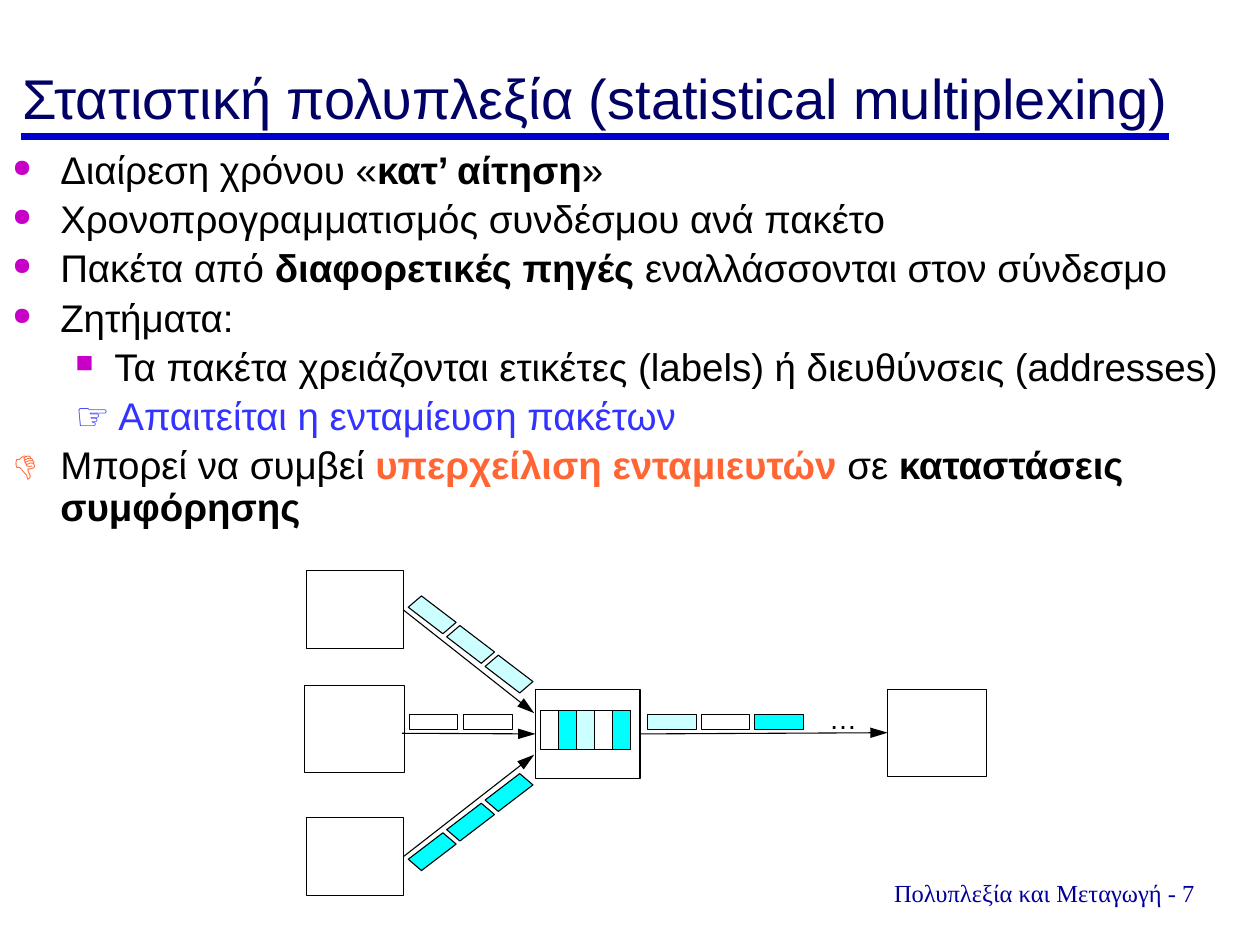
"""Build the slide on statistical multiplexing."""
from dataclasses import dataclass
from typing import NamedTuple, Optional

import lxml.etree
import pptx
import pptx.dml.color
import pptx.enum.shapes
import pptx.enum.text
import pptx.oxml.ns
import pptx.shapes.autoshape
import pptx.shapes.connector
import pptx.slide
import pptx.text.text
import pptx.util

RGBColor = pptx.dml.color.RGBColor
BLACK = RGBColor(0x00, 0x00, 0x00)
NAVY = RGBColor(0x00, 0x00, 0x66)
RULE_BLUE = RGBColor(0x00, 0x00, 0xCC)
FOOTER_BLUE = RGBColor(0x00, 0x00, 0x99)
NOTE_BLUE = RGBColor(0x33, 0x33, 0xFF)
ORANGE = RGBColor(0xFF, 0x66, 0x33)
MAGENTA = RGBColor(0xC7, 0x00, 0xC7)
PALE_CYAN = RGBColor(0xCC, 0xFF, 0xFF)
CYAN = RGBColor(0x00, 0xFF, 0xFF)

COLUMNS, ROWS = 100, 75
CELL = pptx.util.Inches(0.1)
TOP, LEFT, BOTTOM, RIGHT = range(4)
THIN = 0.63
AXIS = 58.2


class Box(NamedTuple):
    """A rectangle in grid columns and rows."""
    column: float
    row: float
    width: float
    height: float


class Span(NamedTuple):
    """A stretch of text with one look."""
    text: str
    bold: bool = False
    color: RGBColor = BLACK


@dataclass(frozen=True)
class Point:
    """A paragraph of the body with its outline level and bullet."""
    spans: tuple[Span, ...]
    bullet: Optional[str] = "●"
    level: int = 0


@dataclass(frozen=True)
class Train:
    """Equal packets in a row, a fill or None for each."""
    first: Box
    pitch: float
    fills: tuple[Optional[RGBColor], ...]


POINTS = (
    Point((Span("Διαίρεση χρόνου «"), Span("κατ’ αίτηση", True), Span("»"))),
    Point((Span("Χρονοπρογραμματισμός συνδέσμου ανά πακέτο"),)),
    Point((Span("Πακέτα από "), Span("διαφορετικές πηγές", True),
           Span(" εναλλάσσονται στον σύνδεσμο"))),
    Point((Span("Ζητήματα:"),)),
    Point((Span("Τα πακέτα χρειάζονται ετικέτες (labels) ή διευθύνσεις (addresses)"),), "■", 1),
    Point((Span("☞ Απαιτείται η ενταμίευση πακέτων", color=NOTE_BLUE),), None, 1),
    Point((Span("👎\t", color=ORANGE), Span("Μπορεί να συμβεί "),
           Span("υπερχείλιση ενταμιευτών ", True, ORANGE), Span("σε "),
           Span("καταστάσεις συμφόρησης", True)), None),
)
INDENTS = ((3.8, -3.8), (8.1, -3.1))

TRAINS = (
    Train(Box(32.5, 56.7, 3.85, 1.2), 4.3, (None, None)),
    Train(Box(51.4, 56.7, 3.85, 1.2), 4.25, (PALE_CYAN, None, CYAN)),
    Train(Box(42.9, 56.4, 1.45, 3.1), 1.43, (None, CYAN, PALE_CYAN, None, CYAN)),
)
SLANTED_PACKET = ((33.45, 47.3), (36.2, 49.4), (35.15, 50.3), (32.4, 48.2))
SLANTED_STEP = (3.05, 2.35)


def grid(cells: float) -> pptx.util.Emu:
    """Turn a number of grid cells into a length."""
    return pptx.util.Emu(round(cells * CELL))


def place(box: Box) -> tuple[pptx.util.Emu, ...]:
    """Turn a box into left, top, width and height."""
    return tuple(grid(cells) for cells in box)


def style(shape: pptx.shapes.autoshape.Shape, fill: Optional[RGBColor], weight: float = THIN) -> None:
    """Give an outline its black line and its fill, if any."""
    shape.shadow.inherit = False
    shape.line.color.rgb = BLACK
    shape.line.width = pptx.util.Pt(weight)
    if fill is None:
        shape.fill.background()
    else:
        shape.fill.solid()
        shape.fill.fore_color.rgb = fill


def draw_box(slide: pptx.slide.Slide, box: Box, fill: Optional[RGBColor] = None,
             weight: float = THIN) -> pptx.shapes.autoshape.Shape:
    """Draw an outlined rectangle."""
    shape = slide.shapes.add_shape(pptx.enum.shapes.MSO_SHAPE.RECTANGLE, *place(box))
    style(shape, fill, weight)
    return shape


def draw_train(slide: pptx.slide.Slide, train: Train) -> None:
    """Draw a row of upright packets."""
    for index, fill in enumerate(train.fills):
        draw_box(slide, train.first._replace(column=train.first.column + index * train.pitch), fill)


def draw_slanted_train(slide: pptx.slide.Slide, fill: RGBColor, mirrored: bool) -> None:
    """Draw three packets along a slope, above the axis or mirrored below it."""
    for index in range(3):
        corners = []
        for column, row in SLANTED_PACKET:
            row += index * SLANTED_STEP[1]
            corners.append((grid(column + index * SLANTED_STEP[0]),
                            grid(2 * AXIS - row if mirrored else row)))
        builder = slide.shapes.build_freeform(*corners[0])
        builder.add_line_segments(corners[1:], close=True)
        style(builder.convert_to_shape(), fill)


def draw_line(slide: pptx.slide.Slide, start: tuple[float, float], end: tuple[float, float],
              color: RGBColor = BLACK, weight: float = THIN,
              arrow: bool = True) -> pptx.shapes.connector.Connector:
    """Draw a straight line, with an arrowhead at its end if wanted."""
    line = slide.shapes.add_connector(pptx.enum.shapes.MSO_CONNECTOR.STRAIGHT,
                                      *map(grid, (*start, *end)))
    line.line.color.rgb = color
    line.line.width = pptx.util.Pt(weight)
    properties = line.element.spPr
    if arrow:
        lxml.etree.SubElement(properties.find(pptx.oxml.ns.qn("a:ln")), pptx.oxml.ns.qn("a:tailEnd"),
                              type="triangle", w="med", len="lg")
    lxml.etree.SubElement(properties, pptx.oxml.ns.qn("a:effectLst"))
    return line


def set_font(paragraph: pptx.text.text._Paragraph, size: float, color: RGBColor,
             name: str = "Arial") -> None:
    """Set the font of a whole paragraph."""
    paragraph.font.size = pptx.util.Pt(size)
    paragraph.font.name = name
    paragraph.font.color.rgb = color


def write_point(paragraph: pptx.text.text._Paragraph, point: Point) -> None:
    """Write one paragraph of the body."""
    paragraph.level = point.level
    paragraph.line_spacing = 0.9
    properties = paragraph._p.get_or_add_pPr()
    margin, indent = INDENTS[point.level]
    properties.set("marL", str(grid(margin)))
    properties.set("indent", str(grid(indent)))
    qn = pptx.oxml.ns.qn
    before = lxml.etree.SubElement(properties, qn("a:spcBef"))
    lxml.etree.SubElement(before, qn("a:spcPct"), val="20000")
    if point.bullet:
        color = lxml.etree.SubElement(properties, qn("a:buClr"))
        lxml.etree.SubElement(color, qn("a:srgbClr"), val=str(MAGENTA))
        lxml.etree.SubElement(properties, qn("a:buSzPct"), val="64000")
        lxml.etree.SubElement(properties, qn("a:buChar"), char=point.bullet)
    set_font(paragraph, 22, BLACK)
    for span in point.spans:
        run = paragraph.add_run()
        run.text = span.text
        run.font.bold = span.bold
        run.font.color.rgb = span.color


def write_texts(slide: pptx.slide.Slide) -> None:
    """Write the title, the footer and the body."""
    draw_line(slide, (1.7, 10.8), (92.8, 10.8), RULE_BLUE, 4, arrow=False)
    title = slide.shapes.title
    title.left, title.top, title.width, title.height = place(Box(0.8, 2.5, 96.7, 8.4))
    title.text_frame.text = "Στατιστική πολυπλεξία (statistical multiplexing)"
    title.text_frame.vertical_anchor = pptx.enum.text.MSO_ANCHOR.BOTTOM
    heading = title.text_frame.paragraphs[0]
    heading.alignment = pptx.enum.text.PP_ALIGN.LEFT
    set_font(heading, 32, NAVY)

    footer = slide.shapes.add_textbox(*place(Box(68.3, 69.2, 29.2, 3.3))).text_frame
    footer.word_wrap = True
    footer.text = "Πολυπλεξία και Μεταγωγή - 7"
    footer.paragraphs[0].alignment = pptx.enum.text.PP_ALIGN.CENTER
    set_font(footer.paragraphs[0], 14, FOOTER_BLUE, "Times New Roman")

    body = slide.shapes.add_textbox(*place(Box(0, 11.5, 103.1, 28.3))).text_frame
    body.word_wrap = True
    for index, point in enumerate(POINTS):
        write_point(body.add_paragraph() if index else body.paragraphs[0], point)


def draw_network(slide: pptx.slide.Slide) -> None:
    """Draw the sources, the multiplexer with its queue, and the receiver."""
    upper_source = draw_box(slide, Box(24.3, 45.3, 7.7, 6.2))
    draw_box(slide, Box(24.2, 54.4, 7.9, 6.9))
    lower_source = draw_box(slide, Box(24.3, 64.9, 7.7, 6.2))
    receiver = draw_box(slide, Box(70.45, 54.7, 7.85, 6.9))
    multiplexer = draw_box(slide, Box(42.5, 54.7, 8.3, 7.1), weight=0.75)

    draw_line(slide, (31.9, AXIS), (42.5, AXIS)).end_connect(multiplexer, LEFT)
    draw_line(slide, (31.9, 48.4), (42.4, 56.6)).begin_connect(upper_source, RIGHT)
    draw_line(slide, (31.9, 68), (42.4, 59.9)).begin_connect(lower_source, RIGHT)
    output = draw_line(slide, (50.8, AXIS), (70.45, AXIS))
    output.begin_connect(multiplexer, RIGHT)
    output.end_connect(receiver, LEFT)

    for train in TRAINS:
        draw_train(slide, train)
    draw_slanted_train(slide, PALE_CYAN, mirrored=False)
    draw_slanted_train(slide, CYAN, mirrored=True)

    dots = slide.shapes.add_textbox(*place(Box(65.8, 55.7, 2.2, 2.7))).text_frame
    dots.margin_left = dots.margin_top = dots.margin_right = dots.margin_bottom = 0
    dots.word_wrap = False
    dots.text = "…"
    dots.paragraphs[0].alignment = pptx.enum.text.PP_ALIGN.CENTER
    set_font(dots.paragraphs[0], 16, BLACK)


def main() -> None:
    """Build and save the presentation."""
    deck = pptx.Presentation()
    deck.slide_width, deck.slide_height = grid(COLUMNS), grid(ROWS)
    slide = deck.slides.add_slide(deck.slide_layouts[5])
    write_texts(slide)
    draw_network(slide)
    deck.save("out.pptx")


if __name__ == "__main__":
    main()
